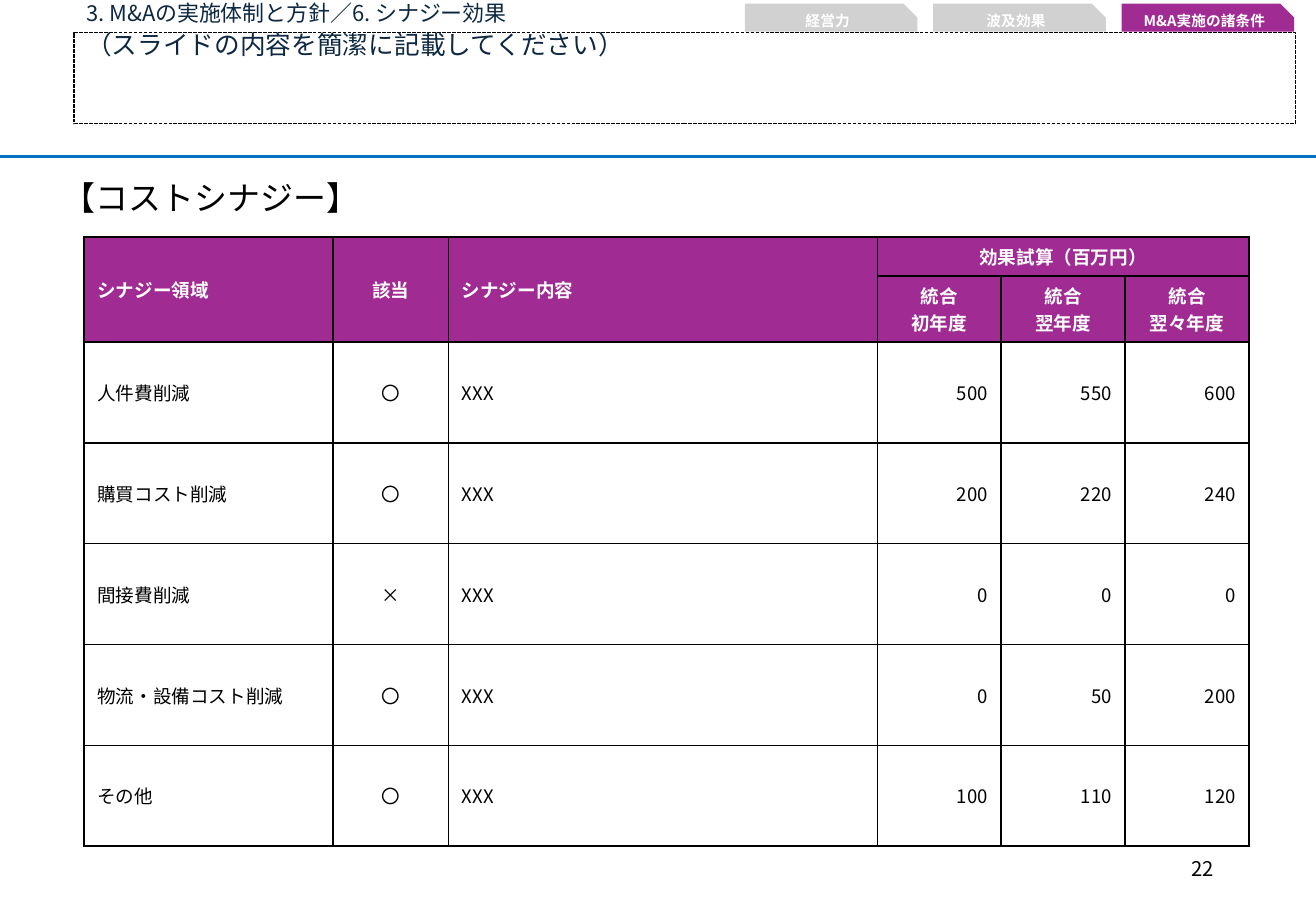
from pptx import Presentation
from pptx.dml.color import RGBColor
from pptx.enum import dml, shapes, text
from pptx.oxml import parse_xml
from pptx.oxml.ns import nsdecls
from pptx.util import Inches, Pt

FACE = "Noto Sans CJK JP"
BLACK, WHITE, NAVY = "000000", "FFFFFF", "0E2841"
PURPLE, GREY, BLUE = "A02B93", "D1D1D1", "0070C0"
LEFT, MID, RIGHT = text.PP_ALIGN.LEFT, text.PP_ALIGN.CENTER, text.PP_ALIGN.RIGHT
TOP, CENTER = text.MSO_ANCHOR.TOP, text.MSO_ANCHOR.MIDDLE


def rgb(code):
    return RGBColor.from_string(code)


def write(frame, words, size, color, align=LEFT, bold=False, **form):
    """Fill a text frame, one paragraph per line; form holds frame attributes."""
    for name, value in form.items():
        setattr(frame, name, value)
    frame.text = words
    for para in frame.paragraphs:
        para.alignment = align
        for run in para.runs:
            for name, value in {"name": FACE, "size": Pt(size), "bold": bold}.items():
                setattr(run.font, name, value)
            run.font.color.rgb = rgb(color)
            run.font._element.append(
                parse_xml(f'<a:ea {nsdecls("a")} typeface="{FACE}"/>'))


deck = Presentation()
deck.slide_width, deck.slide_height = Inches(10.83), Inches(7.5)
slide = deck.slides.add_slide(deck.slide_layouts[1])
items = slide.shapes

# Divider
rule = items.add_connector(shapes.MSO_CONNECTOR.STRAIGHT,
                           0, Inches(1.29), deck.slide_width, Inches(1.29))
rule.line.color.rgb = rgb(BLUE)
rule.line.width = Pt(2)
rule._element.spPr.append(parse_xml(f'<a:effectLst {nsdecls("a")}/>'))

# Title and summary
title, summary = items.title, slide.placeholders[1]
heads = [
    (title, (0.61, -0.03, 5.61, 0.3), "3. M&Aの実施体制と方針／6. シナジー効果", 13, CENTER),
    (summary, (0.61, 0.27, 10.05, 0.75), "（スライドの内容を簡潔に記載してください）", 15.2, TOP),
]
for holder, place, words, size, anchor in heads:
    holder.left, holder.top, holder.width, holder.height = map(Inches, place)
    write(holder.text_frame, words, size, NAVY, vertical_anchor=anchor,
          auto_size=text.MSO_AUTO_SIZE.NONE, margin_top=0, margin_bottom=0)
    para = holder.text_frame.paragraphs[0]
    para.line_spacing, para.space_before = 0.9, Pt(0)
props = summary.text_frame.paragraphs[0]._p.get_or_add_pPr()
props.set("marL", "0")
props.set("indent", "0")
props.append(parse_xml(f'<a:buNone {nsdecls("a")}/>'))
summary.line.color.rgb = rgb(BLACK)
summary.line.width = Pt(0.75)
summary.line.dash_style = dml.MSO_LINE.SQUARE_DOT

# Synergy table
rows = [
    ["シナジー領域", "該当", "シナジー内容", "効果試算（百万円）", "", ""],
    ["", "", "", "統合\n初年度", "統合\n翌年度", "統合\n翌々年度"],
    ["人件費削減", "〇", "XXX", "500", "550", "600"],
    ["購買コスト削減", "〇", "XXX", "200", "220", "240"],
    ["間接費削減", "×", "XXX", "0", "0", "0"],
    ["物流・設備コスト削減", "〇", "XXX", "0", "50", "200"],
    ["その他", "〇", "XXX", "100", "110", "120"],
]
widths = [2.05, 0.95, 3.53] + [1.02] * 3
heights = [0.3, 0.49] + [0.83] * 5
aligns = [LEFT, MID, LEFT] + [RIGHT] * 3
grid = items.add_table(len(rows), len(widths), Inches(0.69), Inches(1.95),
                       Inches(sum(widths)), Inches(sum(heights))).table
grid.first_row = grid.horz_banding = False
for col, width in zip(grid.columns, widths):
    col.width = Inches(width)
for row, height in zip(grid.rows, heights):
    row.height = Inches(height)
for r, row in enumerate(rows):
    head = r < 2
    for c, words in enumerate(row):
        cell = grid.cell(r, c)
        align = MID if head and c > 2 else aligns[c]
        write(cell.text_frame, words, 11, WHITE if head else BLACK, align, head)
        cell.vertical_anchor = CENTER
        cell.margin_left = cell.margin_right = Inches(0.11)
        for side in "LRTB":
            cell._tc.get_or_add_tcPr().append(parse_xml(
                f'<a:ln{side} {nsdecls("a")} w="{Pt(1)}"><a:solidFill>'
                f'<a:srgbClr val="{BLACK}"/></a:solidFill></a:ln{side}>'))
        if head:
            cell.fill.solid()
            cell.fill.fore_color.rgb = rgb(PURPLE)
        else:
            cell.fill.background()
for c in range(3):
    grid.cell(0, c).merge(grid.cell(1, c))
grid.cell(0, 3).merge(grid.cell(0, 5))

# Section heading and page number
notes = [
    ((0.42, 1.46, 2.87, 0.43), "【コストシナジー】", 19.5, LEFT, TOP),
    ((7.65, 6.95, 2.44, 0.4), "22", 12, RIGHT, CENTER),
]
for place, words, size, align, anchor in notes:
    box = items.add_textbox(*map(Inches, place))
    write(box.text_frame, words, size, BLACK, align, word_wrap=True,
          vertical_anchor=anchor, margin_top=0, margin_bottom=0)

# Criteria tabs
tabs = [("経営力", GREY), ("波及効果", GREY), ("M&A実施の諸条件", PURPLE)]
for i, (words, color) in enumerate(tabs):
    tab = items.add_shape(shapes.MSO_SHAPE.SNIP_1_RECTANGLE, Inches(6.13 + 1.55 * i),
                          Inches(0.03), Inches(1.42), Inches(0.23))
    tab.adjustments[0] = 0.5
    tab.shadow.inherit = False
    tab.fill.solid()
    tab.fill.fore_color.rgb = rgb(color)
    tab.line.fill.background()
    write(tab.text_frame, words, 8.7, WHITE, MID, True,
          word_wrap=True, vertical_anchor=CENTER)

deck.save("out.pptx")
